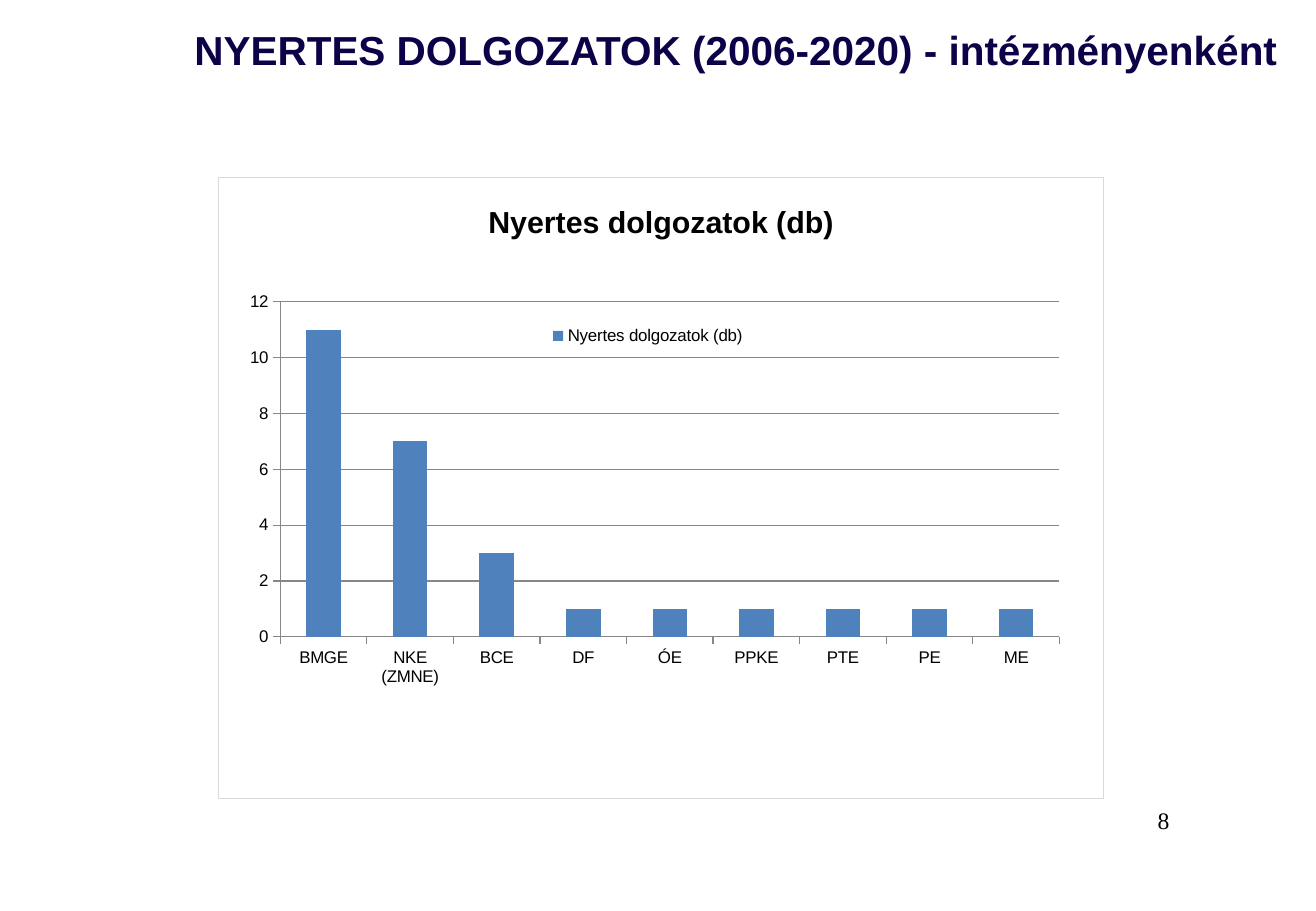
from lxml.etree import SubElement, fromstring
from pptx import Presentation
from pptx.chart.data import CategoryChartData
from pptx.dml.color import RGBColor
from pptx.enum.chart import XL_CHART_TYPE, XL_LEGEND_POSITION, XL_TICK_MARK
from pptx.enum.text import MSO_ANCHOR, PP_ALIGN
from pptx.oxml.ns import nsdecls, qn
from pptx.util import Pt

# Content
TITLE = "NYERTES DOLGOZATOK (2006-2020) - intézményenként"
PAGE = "8"
SERIES = "Nyertes dolgozatok (db)"
WINNERS = {"BMGE": 11, "NKE (ZMNE)": 7, "BCE": 3, "DF": 1, "ÓE": 1,
           "PPKE": 1, "PTE": 1, "PE": 1, "ME": 1}
COLORS = {"title": "0D0147", "text": "000000", "bar": "4F81BD",
          "axis": "878787", "border": "D9D9D9", "plot": "FFFFFF"}


def style_font(font, size, color="text", name="Arial", bold=False):
    font.size, font.name, font.bold = Pt(size), name, bold
    font.color.rgb = RGBColor.from_string(COLORS[color])


def style_line(fmt):
    fmt.line.width = Pt(0.75)
    fmt.line.color.rgb = RGBColor.from_string(COLORS["axis"])


def make_layout(x, y, w, h, inner=False):
    layout = fromstring(f"<c:layout {nsdecls('c')}/>")
    manual = SubElement(layout, qn("c:manualLayout"))
    values = {"xMode": "edge", "yMode": "edge", "x": x, "y": y, "w": w, "h": h}
    if inner:
        values = {"layoutTarget": "inner", **values}
    for tag, value in values.items():
        SubElement(manual, qn(f"c:{tag}")).set("val", str(value))
    return layout


def make_area(fill, line):
    parts = [f'<a:solidFill><a:srgbClr val="{COLORS[c]}"/></a:solidFill>' if c
             else "<a:noFill/>" for c in (fill, line)]
    return fromstring(f'<c:spPr {nsdecls("c", "a")}>{parts[0]}'
                      f'<a:ln w="{Pt(0.75)}">{parts[1]}</a:ln></c:spPr>')


def drop(parent, tag):
    for child in parent.findall(qn(tag)):
        parent.remove(child)


prs = Presentation()
prs.slide_width, prs.slide_height = Pt(780), Pt(540)
s = prs.slides.add_slide(prs.slide_layouts[5])

# Title
title = s.shapes.title
title.left, title.top, title.width, title.height = Pt(108), Pt(5), Pt(672), Pt(48)
tf = title.text_frame
tf.text = TITLE
tf.vertical_anchor = MSO_ANCHOR.MIDDLE
p = tf.paragraphs[0]
p.alignment = PP_ALIGN.LEFT
style_font(p.runs[0].font, 24, "title", bold=True)

# Chart
data = CategoryChartData()
data.categories = list(WINNERS)
data.add_series(SERIES, list(WINNERS.values()))
chart = s.shapes.add_chart(XL_CHART_TYPE.COLUMN_CLUSTERED, Pt(129), Pt(105),
                           Pt(525.6), Pt(368.6), data).chart
style_font(chart.font, 10)
chart.has_title = True
tf = chart.chart_title.text_frame
tf.text = SERIES
style_font(tf.paragraphs[0].runs[0].font, 18, bold=True)

plot = chart.plots[0]
plot.gap_width = 150
plot.vary_by_categories = False
fill = plot.series[0].format.fill
fill.solid()
fill.fore_color.rgb = RGBColor.from_string(COLORS["bar"])

# Axes
for axis in (chart.category_axis, chart.value_axis):
    axis.major_tick_mark = XL_TICK_MARK.OUTSIDE
    axis.minor_tick_mark = XL_TICK_MARK.NONE
    style_font(axis.tick_labels.font, 10)
    style_line(axis.format)
axis = chart.value_axis
axis.minimum_scale, axis.maximum_scale, axis.major_unit = 0, 12, 2
axis.has_major_gridlines = True
style_line(axis.major_gridlines.format)

# Legend inside the plot
chart.has_legend = True
legend = chart.legend
legend.position = XL_LEGEND_POSITION.RIGHT
legend.include_in_layout = False
style_font(legend.font, 10)
legend_xml = legend._element if not hasattr(legend, "element") else legend.element
drop(legend_xml, "c:layout")
legend_xml.find(qn("c:legendPos")).addnext(make_layout(0.37, 0.23, 0.23, 0.05))

# Plot area and chart border
space = chart.element
area = space.find(qn("c:chart")).find(qn("c:plotArea"))
drop(area, "c:layout")
area.insert(0, make_layout(0.07, 0.2, 0.88, 0.54, inner=True))
area.append(make_area("plot", None))
space.find(qn("c:chart")).addnext(make_area("plot", "border"))

# Page number
tf = s.shapes.add_textbox(Pt(679), Pt(474), Pt(55), Pt(39)).text_frame
tf.word_wrap = True
tf.text = PAGE
style_font(tf.paragraphs[0].runs[0].font, 14, name="Times New Roman")

prs.save("out.pptx")
